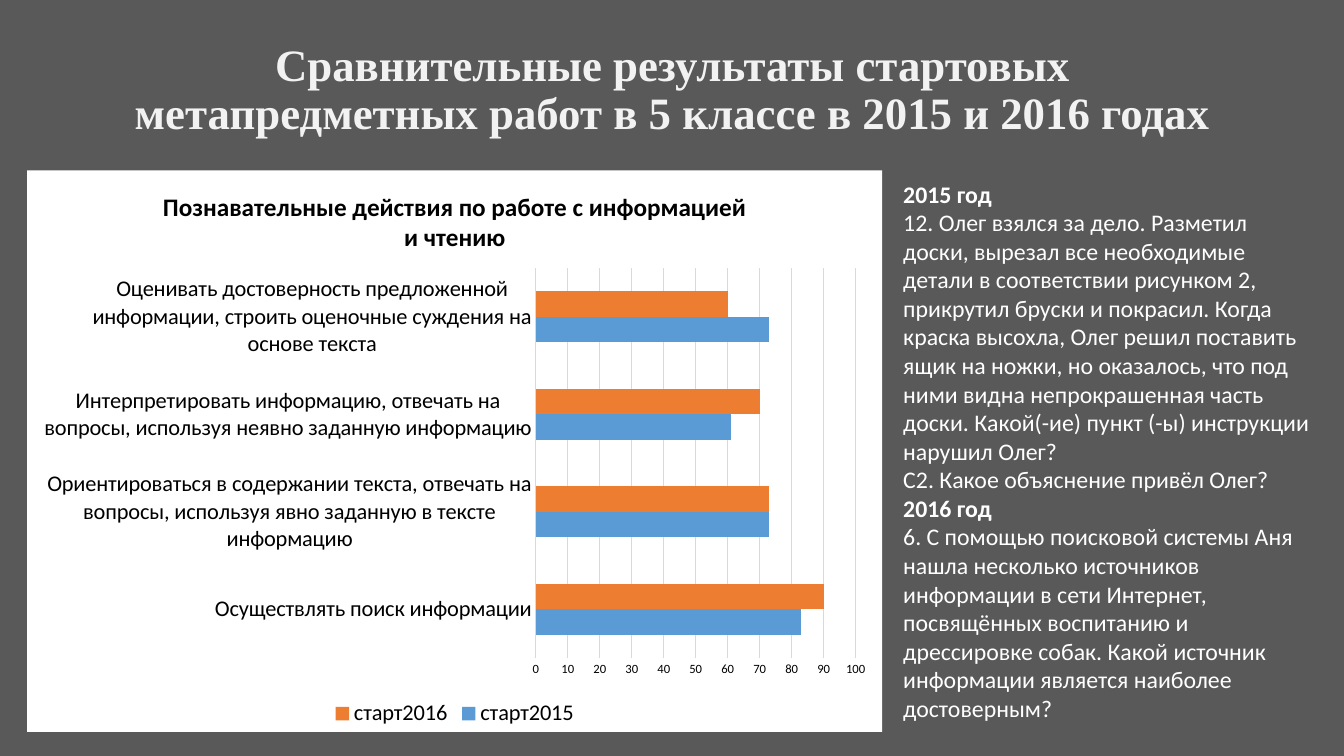
from lxml import etree
from pptx import Presentation
from pptx.chart.data import CategoryChartData
from pptx.dml.color import RGBColor
from pptx.enum.chart import XL_CHART_TYPE as ChartType, XL_LEGEND_POSITION as LegendPosition
from pptx.enum.chart import XL_TICK_MARK as TickMark
from pptx.enum.text import MSO_ANCHOR as Anchor, PP_ALIGN as Align
from pptx.oxml import parse_xml
from pptx.oxml.ns import nsdecls, qn
from pptx.util import Inches, Pt

GRAPHITE = RGBColor(0x59, 0x59, 0x59)
PALE = RGBColor(0xF2, 0xF2, 0xF2)
WHITE = RGBColor(0xFF, 0xFF, 0xFF)
BLACK = RGBColor(0, 0, 0)
GRID = RGBColor(0xD9, 0xD9, 0xD9)
BLUE = RGBColor(0x5B, 0x9B, 0xD5)
ORANGE = RGBColor(0xED, 0x7D, 0x31)

WIDTH, HEIGHT = 13.33, 7.5
TITLE_AREA = (0.92, 0.21, 11.5, 1.39)
CHART_AREA = (0.27, 1.69, 8.48, 5.57)
TASKS_AREA = (8.86, 1.73, 4.28, 5.54)
PLOT_SHARES = {"x": 0.595, "y": 0.174, "w": 0.374, "h": 0.695}

TITLE = "Сравнительные результаты стартовых метапредметных работ в 5 классе в 2015 и 2016 годах"
CHART_TITLE = ["Познавательные действия по работе с информацией", "и чтению"]
SKILLS = [
    "Осуществлять поиск информации",
    "Ориентироваться в содержании текста, отвечать на вопросы, используя явно заданную в тексте информацию",
    "Интерпретировать информацию, отвечать на вопросы, используя неявно заданную информацию",
    "Оценивать достоверность предложенной информации, строить оценочные суждения на основе текста",
]
RESULTS = [
    ("старт2015", (83, 73, 61, 73), BLUE),
    ("старт2016", (90, 73, 70, 60), ORANGE),
]
TASKS = [
    ("2015 год", True),
    ("12. Олег взялся за дело. Разметил доски, вырезал все необходимые детали в соответствии "
     "рисунком 2, прикрутил бруски и покрасил. Когда краска высохла, Олег решил поставить ящик "
     "на ножки, но оказалось, что под ними видна непрокрашенная часть доски. Какой(-ие) пункт "
     "(-ы) инструкции нарушил Олег?", False),
    ("С2. Какое объяснение привёл Олег?", False),
    ("2016 год", True),
    ("6. С помощью поисковой системы Аня нашла несколько источников информации в сети Интернет, "
     "посвящённых воспитанию и дрессировке собак. Какой источник информации является наиболее "
     "достоверным?", False),
]


def set_font(font, size, color=BLACK, bold=False, name="Calibri"):
    font.size, font.bold, font.name = Pt(size), bold, name
    font.color.rgb = color


def write(frame, lines, size, align=None, spacing=None, **style):
    for index, (text, bold) in enumerate(lines):
        para = frame.add_paragraph() if index else frame.paragraphs[0]
        para.alignment, para.line_spacing = align, spacing
        span = para.add_run()
        span.text = text
        set_font(span.font, size, bold=bold, **style)


def add_text(page, area, lines, size, anchor=Anchor.TOP, **style):
    box = page.shapes.add_textbox(*map(Inches, area))
    box.text_frame.word_wrap = True
    box.text_frame.vertical_anchor = anchor
    write(box.text_frame, lines, size, **style)


def set_grid_line(line):
    line.color.rgb = GRID
    line.width = Pt(0.75)


def add_results_chart(page):
    data = CategoryChartData()
    data.categories = SKILLS
    for name, values, _ in RESULTS:
        data.add_series(name, values)
    chart = page.shapes.add_chart(ChartType.BAR_CLUSTERED, *map(Inches, CHART_AREA), data).chart
    set_font(chart.font, 10)
    write(chart.chart_title.text_frame, [(line, True) for line in CHART_TITLE], 18, align=Align.CENTER)
    chart.chart_title.include_in_layout = False

    chart.has_legend = True
    chart.legend.position = LegendPosition.BOTTOM
    chart.legend.include_in_layout = False
    set_font(chart.legend.font, 16)

    plot = chart.plots[0]
    plot.gap_width, plot.overlap, plot.vary_by_categories = 182, 0, False
    for series, (_, _, color) in zip(plot.series, RESULTS):
        series.format.fill.solid()
        series.format.fill.fore_color.rgb = color

    for axis, size in ((chart.category_axis, 16), (chart.value_axis, 9)):
        axis.major_tick_mark = axis.minor_tick_mark = TickMark.NONE
        set_font(axis.tick_labels.font, size)
    set_grid_line(chart.category_axis.format.line)
    chart.value_axis.format.line.fill.background()
    chart.value_axis.minimum_scale, chart.value_axis.maximum_scale = 0, 100
    chart.value_axis.major_unit = 10
    set_grid_line(chart.value_axis.major_gridlines.format.line)

    space = chart.element
    space.find(qn("c:chart")).addnext(parse_xml(
        f'<c:spPr {nsdecls("c", "a")}><a:solidFill><a:srgbClr val="{WHITE}"/></a:solidFill>'
        '<a:ln><a:noFill/></a:ln></c:spPr>'))
    plot_area = space.find(".//" + qn("c:plotArea"))
    for old in plot_area.findall(qn("c:layout")):
        plot_area.remove(old)
    layout = etree.Element(qn("c:layout"))
    manual = etree.SubElement(layout, qn("c:manualLayout"))
    settings = {"layoutTarget": "inner", "xMode": "edge", "yMode": "edge", **PLOT_SHARES}
    for tag, value in settings.items():
        etree.SubElement(manual, qn("c:" + tag)).set("val", str(value))
    plot_area.insert(0, layout)


def main():
    deck = Presentation()
    deck.slide_width, deck.slide_height = Inches(WIDTH), Inches(HEIGHT)
    page = deck.slides.add_slide(deck.slide_layouts[6])
    page.background.fill.solid()
    page.background.fill.fore_color.rgb = GRAPHITE
    add_text(page, TITLE_AREA, [(TITLE, True)], 32, anchor=Anchor.MIDDLE, align=Align.CENTER,
             spacing=0.9, color=PALE, name="Times New Roman")
    add_results_chart(page)
    add_text(page, TASKS_AREA, TASKS, 17, color=WHITE)
    deck.save("out.pptx")


if __name__ == "__main__":
    main()
